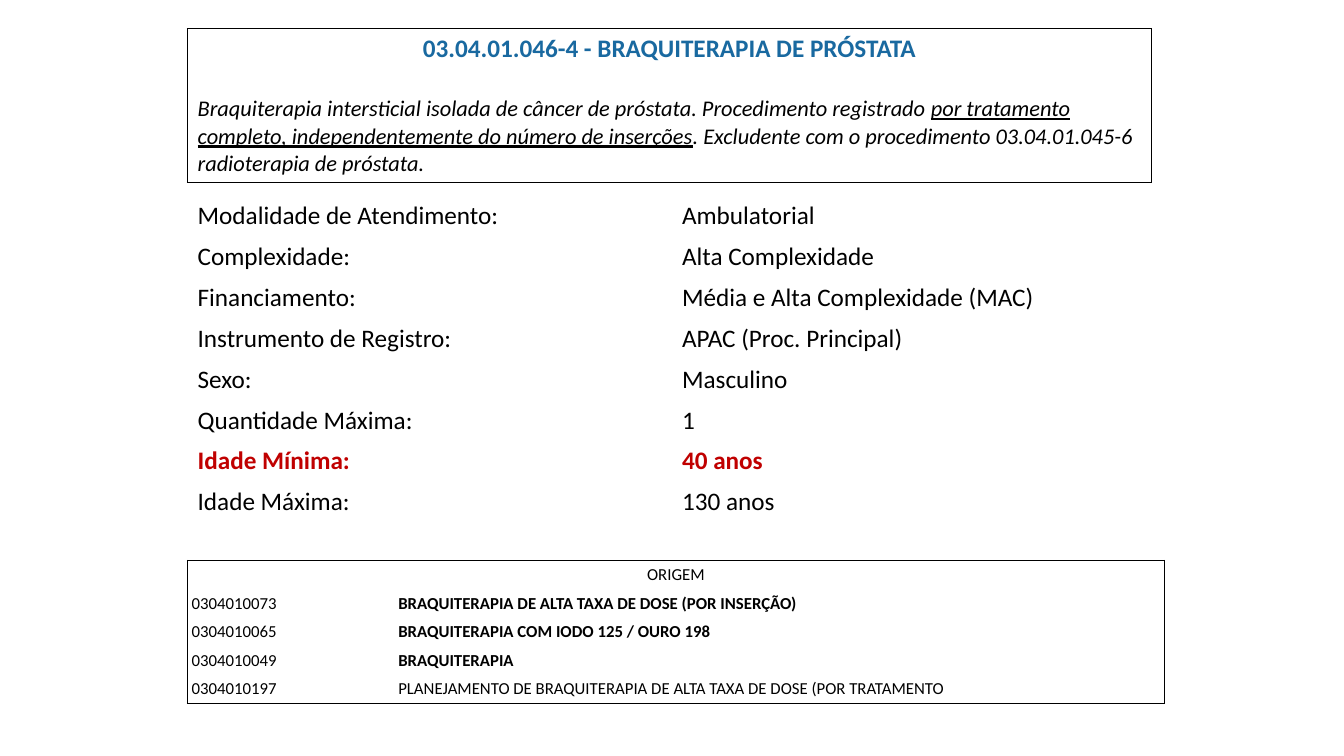
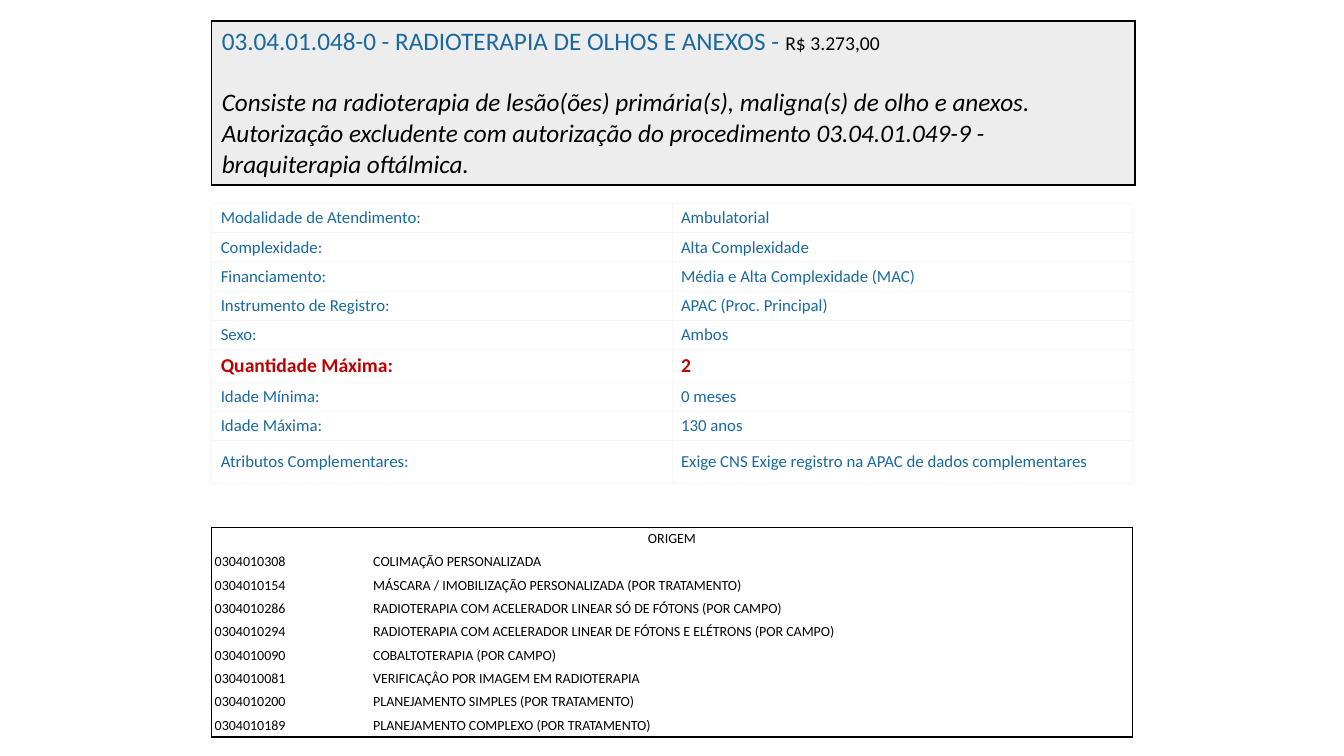
from lxml.etree import SubElement
from pptx import Presentation
from pptx.dml.color import RGBColor as Rgb
from pptx.enum.text import MSO_ANCHOR as Anchor, PP_ALIGN as Align
from pptx.oxml.ns import qn
from pptx.util import Pt

COLORS = {
    "text": "000000",
    "accent": "1969A0",
    "alert": "C00000",
    "paper": "FFFFFF",
    "band": "EDEDED",
    "grid": "F6F6F6",
}
SIDES = "LRTB"


class Deck:
    font = "Calibri"

    def __init__(self):
        self.prs = Presentation()
        self.prs.slide_width, self.prs.slide_height = Pt(960), Pt(540)
        self.slide = None

    def new_slide(self):
        self.slide = self.prs.slides.add_slide(self.prs.slide_layouts[6])

    def table(self, left, top, widths, heights):
        frame = self.slide.shapes.add_table(
            len(heights), len(widths), Pt(left), Pt(top), Pt(sum(widths)), Pt(sum(heights)))
        table = frame.table
        table.first_row = table.horz_banding = False
        for column, width in zip(table.columns, widths):
            column.width = Pt(width)
        for row, height in zip(table.rows, heights):
            row.height = Pt(height)
        return table

    def cell(self, cell, fill="paper", margins=(7.2, 3.6), edges="", edge="text", weight=1):
        cell.vertical_anchor = Anchor.MIDDLE
        cell.margin_left = cell.margin_right = Pt(margins[0])
        cell.margin_top = cell.margin_bottom = Pt(margins[1])
        props = cell._tc.get_or_add_tcPr()
        for side in SIDES:
            line = SubElement(props, qn(f"a:ln{side}"), w=str(Pt(weight)))
            if side in edges:
                paint = SubElement(line, qn("a:solidFill"))
                SubElement(paint, qn("a:srgbClr"), val=COLORS[edge])
            else:
                SubElement(line, qn("a:noFill"))
        cell.fill.solid()
        cell.fill.fore_color.rgb = Rgb.from_string(COLORS[fill])

    def style(self, font, size, color="text", bold=False, italic=False):
        font.name, font.size, font.bold, font.italic = self.font, Pt(size), bold, italic
        font.color.rgb = Rgb.from_string(COLORS[color])

    def label(self, cell, text, size, color="text", bold=False, align=Align.LEFT):
        paragraph = cell.text_frame.paragraphs[0]
        paragraph.text, paragraph.alignment = text, align
        self.style(paragraph.font, size, color, bold)

    def header(self, box, title, summary, size, fill="paper", price="", bold=False,
               align=Align.LEFT):
        left, top, width, height = box
        cell = self.table(left, top, [width], [height]).cell(0, 0)
        self.cell(cell, fill, edges=SIDES)
        heading = cell.text_frame.paragraphs[0]
        heading.alignment, heading.space_after = align, Pt(22)
        title_run = heading.add_run()
        title_run.text = title
        self.style(title_run.font, 18, "accent", bold)
        if price:
            price_run = heading.add_run()
            price_run.text = price
            self.style(price_run.font, 14)
        body = cell.text_frame.add_paragraph()
        self.style(body.font, size, italic=True)
        for text, underlined in summary:
            run = body.add_run()
            run.text = text
            if underlined:
                run.font.underline = True

    def details(self, left, top, width, heights, entries, size, color, alert, alert_size,
                **cell_style):
        table = self.table(left, top, [width, width], heights)
        for row, entry in enumerate(entries):
            marked = entry[0] == alert
            for col, text in enumerate(entry):
                cell = table.cell(row, col)
                self.cell(cell, **cell_style)
                self.label(cell, text, alert_size if marked else size,
                           "alert" if marked else color, marked)

    def origins(self, left, top, widths, row_height, entries, size, margin, bold_rows=0):
        last = len(entries)
        table = self.table(left, top, widths, [row_height] * (last + 1))
        table.cell(0, 0).merge(table.cell(0, 1))
        for col in range(2):
            self.cell(table.cell(0, col), margins=(margin, margin), edges="LRT")
        self.label(table.cell(0, 0), "ORIGEM", size, align=Align.CENTER)
        for row, entry in enumerate(entries, 1):
            for col, text in enumerate(entry):
                cell = table.cell(row, col)
                edges = "LR"[col] + ("B" if row == last else "")
                self.cell(cell, margins=(margin, margin), edges=edges)
                self.label(cell, text, size, bold=col == 1 and row <= bold_rows)


def prostate(deck):
    deck.new_slide()
    deck.details(134, 139.7, 346, [28.8] * 8, [
        ("Modalidade de Atendimento:", "Ambulatorial"),
        ("Complexidade:", "Alta Complexidade"),
        ("Financiamento:", "Média e Alta Complexidade (MAC)"),
        ("Instrumento de Registro:", "APAC (Proc. Principal)"),
        ("Sexo:", "Masculino"),
        ("Quantidade Máxima:", "1"),
        ("Idade Mínima:", "40 anos"),
        ("Idade Máxima:", "130 anos"),
    ], 18, "text", "Idade Mínima:", 18)
    deck.header((134, 20.5, 688.5, 108), "03.04.01.046-4 - BRAQUITERAPIA DE PRÓSTATA", [
        ("Braquiterapia intersticial isolada de câncer de próstata. Procedimento registrado ",
         False),
        ("por tratamento completo, independentemente do número de inserções", True),
        (". Excludente com o procedimento 03.04.01.045-6 radioterapia de próstata.", False),
    ], 16, bold=True, align=Align.CENTER)
    deck.origins(134, 400.3, [147.6, 550.1], 20.4, [
        ("0304010073", "BRAQUITERAPIA DE ALTA TAXA DE DOSE (POR INSERÇÃO)"),
        ("0304010065", "BRAQUITERAPIA COM IODO 125 / OURO 198"),
        ("0304010049", "BRAQUITERAPIA"),
        ("0304010197", "PLANEJAMENTO DE BRAQUITERAPIA DE ALTA TAXA DE DOSE (POR TRATAMENTO"),
    ], 12, 2.9, bold_rows=3)


def eyes(deck):
    deck.new_slide()
    deck.header((151.2, 15, 659.5, 115.2),
                "03.04.01.048-0 - RADIOTERAPIA DE OLHOS E ANEXOS - ", [
        ("Consiste na radioterapia de lesão(ões) primária(s), maligna(s) de olho e anexos. "
         "Autorização excludente com autorização do procedimento 03.04.01.049-9 - "
         "braquiterapia oftálmica.", False),
    ], 18, "band", price="R$ 3.273,00")
    deck.origins(151.2, 376.6, [113.2, 544.3], 16.65, [
        ("0304010308", "COLIMAÇÃO PERSONALIZADA"),
        ("0304010154", "MÁSCARA / IMOBILIZAÇÃO PERSONALIZADA (POR TRATAMENTO)"),
        ("0304010286", "RADIOTERAPIA COM ACELERADOR LINEAR SÓ DE FÓTONS (POR CAMPO)"),
        ("0304010294", "RADIOTERAPIA COM ACELERADOR LINEAR DE FÓTONS E ELÉTRONS (POR CAMPO)"),
        ("0304010090", "COBALTOTERAPIA (POR CAMPO)"),
        ("0304010081", "VERIFICAÇÂO POR IMAGEM EM RADIOTERAPIA"),
        ("0304010200", "PLANEJAMENTO SIMPLES (POR TRATAMENTO)"),
        ("0304010189", "PLANEJAMENTO COMPLEXO (POR TRATAMENTO)"),
    ], 10, 2.2)
    deck.details(151.2, 145.4, 328.8, [20.8] * 5 + [23.4] + [20.8] * 2 + [30.6], [
        ("Modalidade de Atendimento:", "Ambulatorial"),
        ("Complexidade:", "Alta Complexidade"),
        ("Financiamento:", "Média e Alta Complexidade (MAC)"),
        ("Instrumento de Registro:", "APAC (Proc. Principal)"),
        ("Sexo:", "Ambos"),
        ("Quantidade Máxima:", "2"),
        ("Idade Mínima:", "0 meses"),
        ("Idade Máxima:", "130 anos"),
        ("Atributos Complementares:", "Exige CNS Exige registro na APAC de dados complementares"),
    ], 12, "accent", "Quantidade Máxima:", 14,
        margins=(6.5, 3.1), edges=SIDES, edge="grid", weight=0.75)


def main():
    deck = Deck()
    prostate(deck)
    eyes(deck)
    deck.prs.save("out.pptx")


if __name__ == "__main__":
    main()
